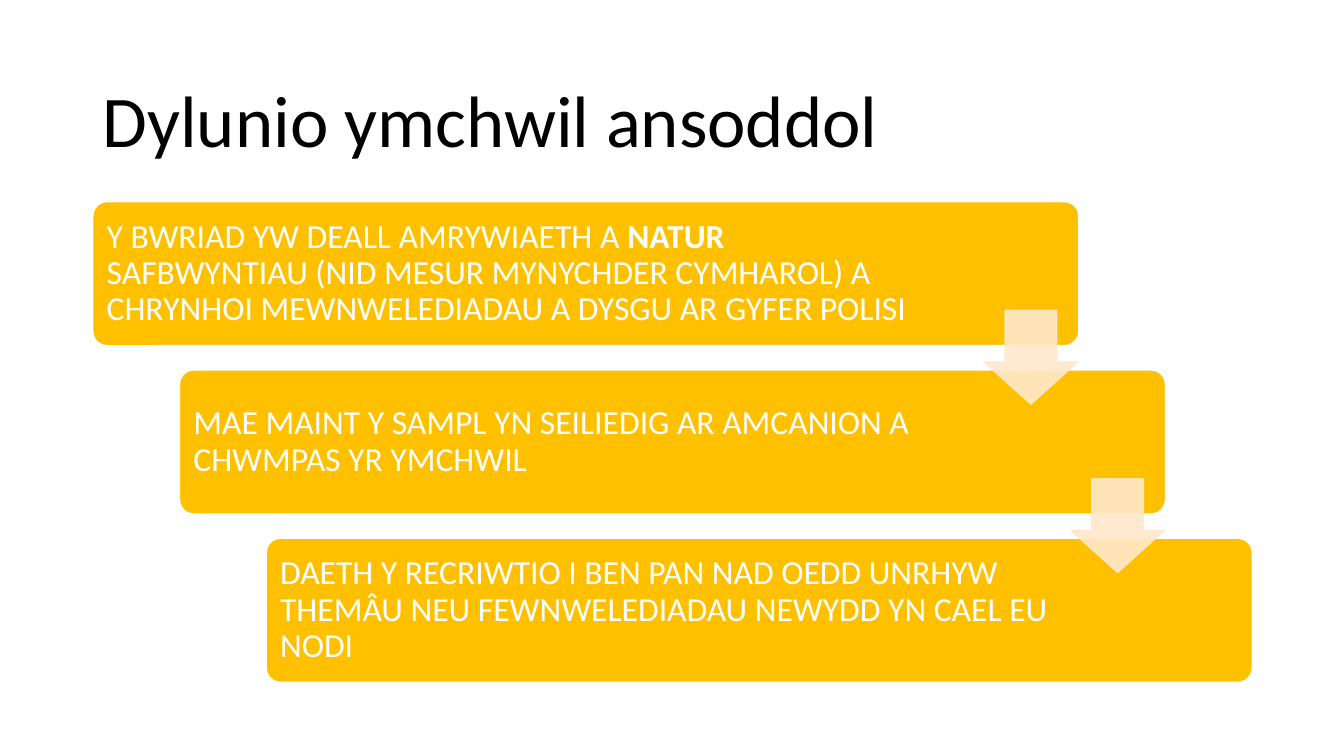
import dataclasses

import pptx
import pptx.dml.color
import pptx.enum.shapes
import pptx.enum.text
import pptx.oxml.ns
import pptx.util
from lxml import etree

EMU_PER_PX = 9144  # 100 px to the inch
SHAPES = pptx.enum.shapes.MSO_SHAPE


@dataclasses.dataclass(frozen=True)
class Theme:
    font: str = "Calibri"
    title_size: int = 52
    step_size: int = 24
    title_ink: str = "000000"
    step_ink: str = "FFFFFF"
    step_fill: str = "FFC000"
    step_line: str = "FFFFFF"
    arrow_fill: str = "FFE8CC"
    arrow_opacity: int = 90


THEME = Theme()

# Each step: text width, then (text, bold) runs
STEPS = [
    (823, [("Y BWRIAD YW DEALL AMRYWIAETH A ", False),
           ("NATUR ", True),
           ("SAFBWYNTIAU (NID MESUR MYNYCHDER CYMHAROL) A CHRYNHOI "
            "MEWNWELEDIADAU A DYSGU AR GYFER POLISI", False)]),
    (790, [("MAE MAINT Y SAMPL YN SEILIEDIG AR AMCANION A CHWMPAS YR YMCHWIL",
            False)]),
    (790, [("DAETH Y RECRIWTIO I BEN PAN NAD OEDD UNRHYW THEMÂU NEU "
            "FEWNWELEDIADAU NEWYDD YN CAEL EU NODI", False)]),
]
STEP_LEFT, STEP_TOP, STEP_WIDTH, STEP_HEIGHT = 92, 200, 978, 143
STEP_RIGHTWARD, STEP_DOWNWARD = 86, 167
TEXT_MARGIN = 4
ARROW_LEFT, ARROW_TOP, ARROW_SIZE = 976, 308, 93


def px(*lengths):
    return [pptx.util.Emu(length * EMU_PER_PX) for length in lengths]


def rgb(colour):
    return pptx.dml.color.RGBColor.from_string(colour)


def add_words(slide, box, runs, size, ink, inset_y):
    """Add wrapped, vertically centred text."""
    frame = slide.shapes.add_textbox(*px(*box)).text_frame
    frame.word_wrap = True
    frame.vertical_anchor = pptx.enum.text.MSO_ANCHOR.MIDDLE
    frame.margin_left, frame.margin_right = px(10, 10)
    frame.margin_top, frame.margin_bottom = px(inset_y, inset_y)
    paragraph = frame.paragraphs[0]
    paragraph.line_spacing = 0.9
    paragraph.font.name = THEME.font
    paragraph.font.size = pptx.util.Pt(size)
    paragraph.font.color.rgb = rgb(ink)
    for text, bold in runs:
        run = paragraph.add_run()
        run.text = text
        if bold:
            run.font.bold = True


def add_block(slide, preset, box, adjustments, fill, line):
    block = slide.shapes.add_shape(preset, *px(*box))
    block.shadow.inherit = False
    for index, value in enumerate(adjustments):
        block.adjustments[index] = value
    block.fill.solid()
    block.fill.fore_color.rgb = rgb(fill)
    block.line.color.rgb = rgb(line)
    block.line.width = pptx.util.Pt(1)
    return block


def add_step(slide, index, text_width, runs):
    left = STEP_LEFT + index * STEP_RIGHTWARD
    top = STEP_TOP + index * STEP_DOWNWARD
    add_block(slide, SHAPES.ROUNDED_RECTANGLE,
              (left, top, STEP_WIDTH, STEP_HEIGHT), [0.1],
              THEME.step_fill, THEME.step_line)
    text_box = (left + TEXT_MARGIN, top + TEXT_MARGIN,
                text_width, STEP_HEIGHT - 2 * TEXT_MARGIN)
    add_words(slide, text_box, runs, THEME.step_size, THEME.step_ink, 10)


def add_arrow(slide, index):
    box = (ARROW_LEFT + index * STEP_RIGHTWARD,
           ARROW_TOP + index * STEP_DOWNWARD, ARROW_SIZE, ARROW_SIZE)
    arrow = add_block(slide, SHAPES.DOWN_ARROW, box, [0.55, 0.45],
                      THEME.arrow_fill, THEME.arrow_fill)
    # Opacity for both fill and outline
    for colour in arrow.element.spPr.iter(pptx.oxml.ns.qn("a:srgbClr")):
        alpha = etree.SubElement(colour, pptx.oxml.ns.qn("a:alpha"))
        alpha.set("val", str(THEME.arrow_opacity * 1000))


def main():
    deck = pptx.Presentation()
    deck.slide_width, deck.slide_height = px(1333, 750)
    slide = deck.slides.add_slide(deck.slide_layouts[6])

    # Title
    add_words(slide, (92, 61, 1150, 124), [("Dylunio ymchwil ansoddol", False)],
              THEME.title_size, THEME.title_ink, 5)

    # Staircase of steps
    for index, (text_width, runs) in enumerate(STEPS):
        add_step(slide, index, text_width, runs)

    # Arrows from each step to the next
    for index in range(len(STEPS) - 1):
        add_arrow(slide, index)

    deck.save("out.pptx")


if __name__ == "__main__":
    main()
